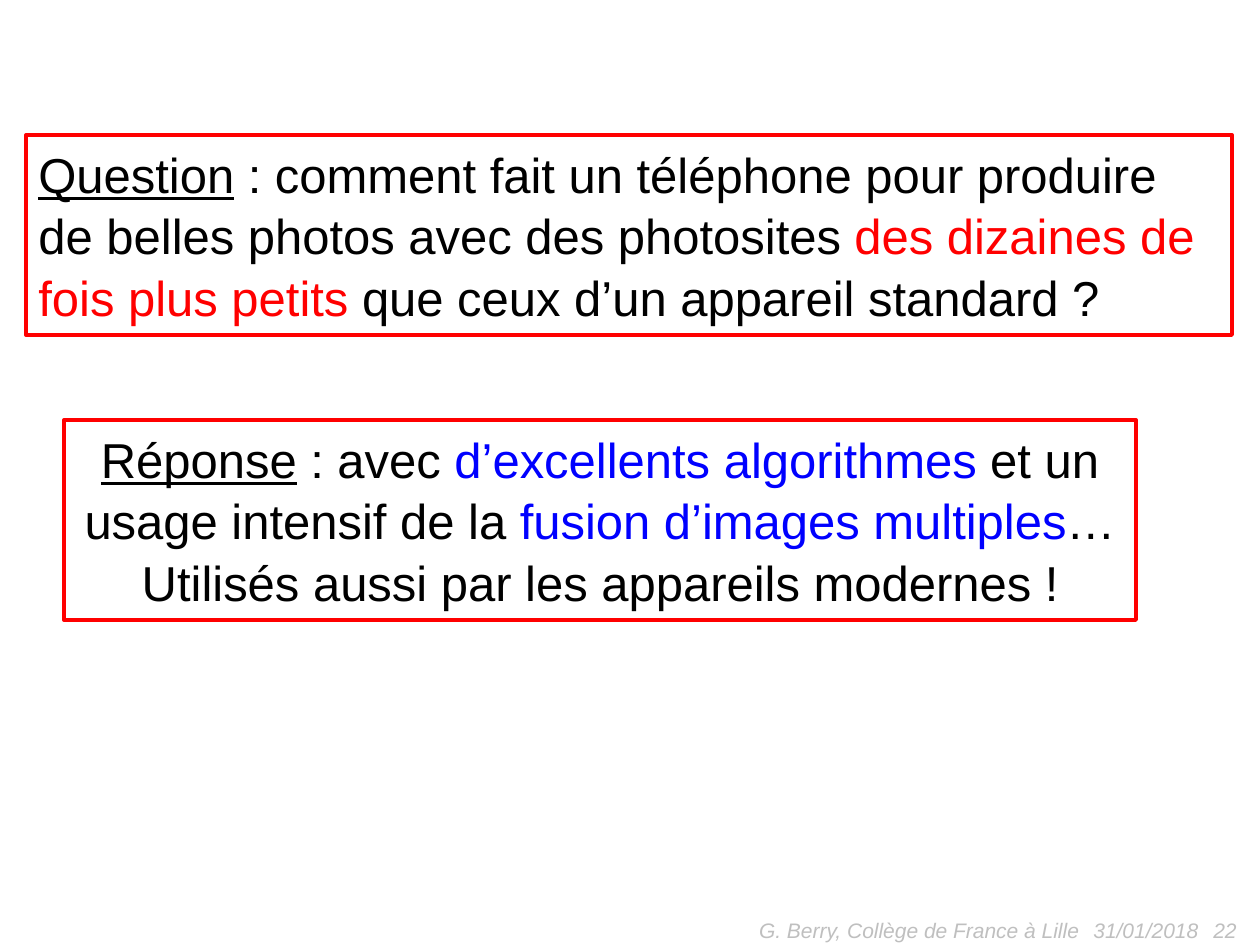
"""Build the question and answer slide about phone photography."""
from dataclasses import dataclass

import pptx
import pptx.dml.color
import pptx.enum.shapes
import pptx.enum.text
import pptx.util

PX = pptx.util.Inches(1) // 126
FONT = "Arial"
COLOURS = {
    "text": "000000",
    "frame": "FF0000",
    "problem": "FF0000",
    "solution": "0000FF",
    "footer": "BFBFBF",
}
ALIGN = pptx.enum.text.PP_ALIGN
ANCHOR = pptx.enum.text.MSO_ANCHOR


@dataclass(frozen=True)
class Span:
    text: str
    colour: str = "text"
    underline: bool = False


@dataclass(frozen=True)
class Statement:
    left: int
    top: int
    width: int
    height: int
    align: ALIGN
    wrap: bool
    lines: list[list[Span]]


@dataclass(frozen=True)
class FooterItem:
    text: str
    left: int
    width: int
    align: ALIGN


STATEMENTS = [
    Statement(26, 135, 1206, 200, ALIGN.LEFT, True, [
        [Span("Question", underline=True),
         Span(" : comment fait un téléphone pour produire")],
        [Span("de belles photos avec des photosites "),
         Span("des dizaines de fois plus petits", "problem"),
         Span(" que ceux d’un appareil standard ?")],
    ]),
    Statement(64, 420, 1072, 200, ALIGN.CENTER, False, [
        [Span("Réponse", underline=True), Span(" : avec "),
         Span("d’excellents algorithmes", "solution"), Span(" et un")],
        [Span("usage intensif de la "),
         Span("fusion d’images multiples", "solution"), Span("…")],
        [Span("Utilisés aussi par les appareils modernes !")],
    ]),
]
FOOTER_TOP, FOOTER_HEIGHT = 905, 50
FOOTER = [
    FooterItem("22", 955, 294, ALIGN.RIGHT),
    FooterItem("G. Berry, Collège de France à Lille", 693, 399, ALIGN.RIGHT),
    FooterItem("31/01/2018", 1081, 294, ALIGN.LEFT),
]


def rgb(name: str) -> pptx.dml.color.RGBColor:
    return pptx.dml.color.RGBColor.from_string(COLOURS[name])


def style(font: pptx.text.text.Font, size: int, colour: str) -> None:
    font.name = FONT
    font.size = pptx.util.Pt(size)
    font.color.rgb = rgb(colour)


def draw_statement(slide: pptx.slide.Slide, statement: Statement) -> None:
    frame = slide.shapes.add_shape(
        pptx.enum.shapes.MSO_SHAPE.RECTANGLE,
        statement.left * PX, statement.top * PX,
        statement.width * PX, statement.height * PX)
    frame.shadow.inherit = False
    frame.fill.background()
    frame.line.color.rgb = rgb("frame")
    frame.line.width = pptx.util.Pt(2.25)
    body = frame.text_frame
    body.word_wrap = statement.wrap
    body.auto_size = pptx.enum.text.MSO_AUTO_SIZE.SHAPE_TO_FIT_TEXT
    body.vertical_anchor = ANCHOR.TOP
    body.text = "\n".join(
        "".join(span.text for span in line) for line in statement.lines)
    for paragraph, line in zip(body.paragraphs, statement.lines):
        paragraph.alignment = statement.align
        paragraph.line_spacing = 1.05
        paragraph.clear()
        for span in line:
            run = paragraph.add_run()
            run.text = span.text
            style(run.font, 28, span.colour)
            run.font.underline = span.underline


def draw_footer_item(slide: pptx.slide.Slide, item: FooterItem) -> None:
    body = slide.shapes.add_textbox(
        item.left * PX, FOOTER_TOP * PX,
        item.width * PX, FOOTER_HEIGHT * PX).text_frame
    body.word_wrap = True
    body.vertical_anchor = ANCHOR.MIDDLE
    body.text = item.text
    paragraph = body.paragraphs[0]
    paragraph.alignment = item.align
    font = paragraph.runs[0].font
    style(font, 12, "footer")
    font.italic = True


def main() -> None:
    presentation = pptx.Presentation()
    presentation.slide_width = 1260 * PX
    presentation.slide_height = 945 * PX
    slide = presentation.slides.add_slide(presentation.slide_layouts[6])
    for statement in STATEMENTS:
        draw_statement(slide, statement)
    for item in FOOTER:
        draw_footer_item(slide, item)
    presentation.save("out.pptx")


if __name__ == "__main__":
    main()
